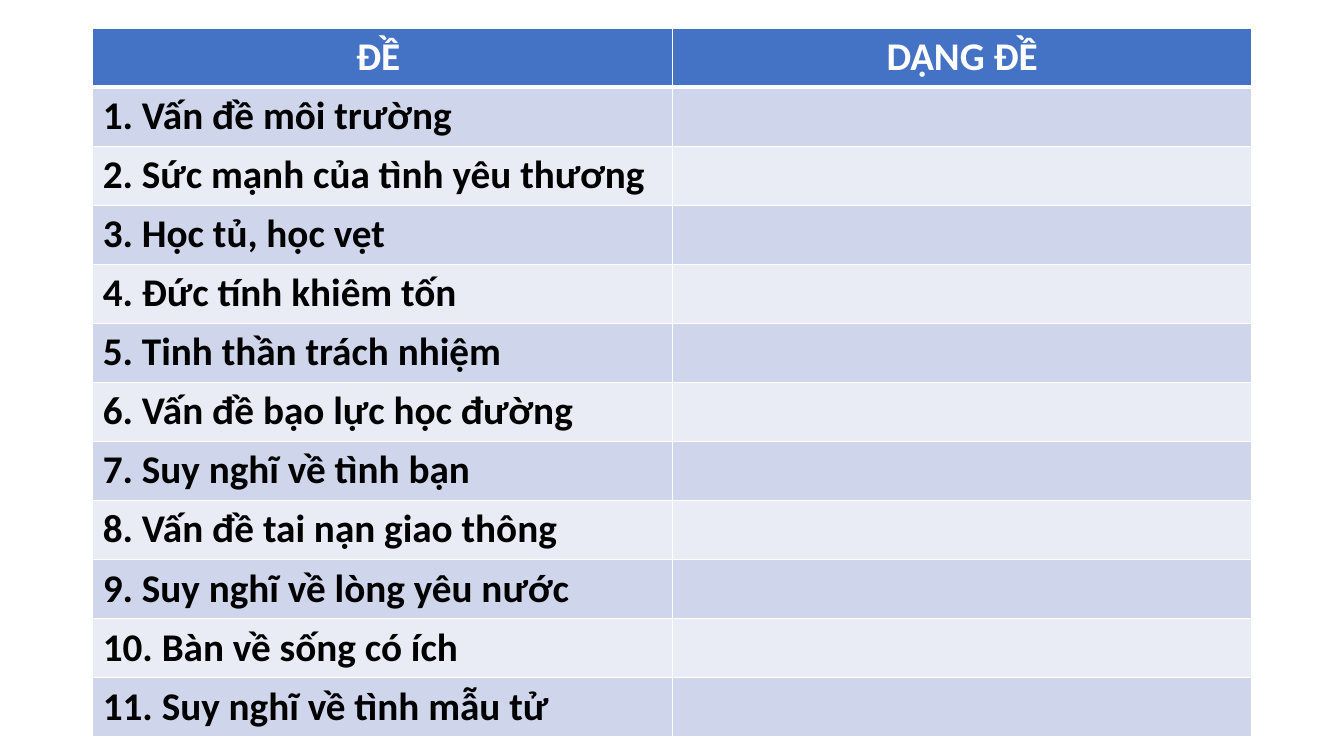
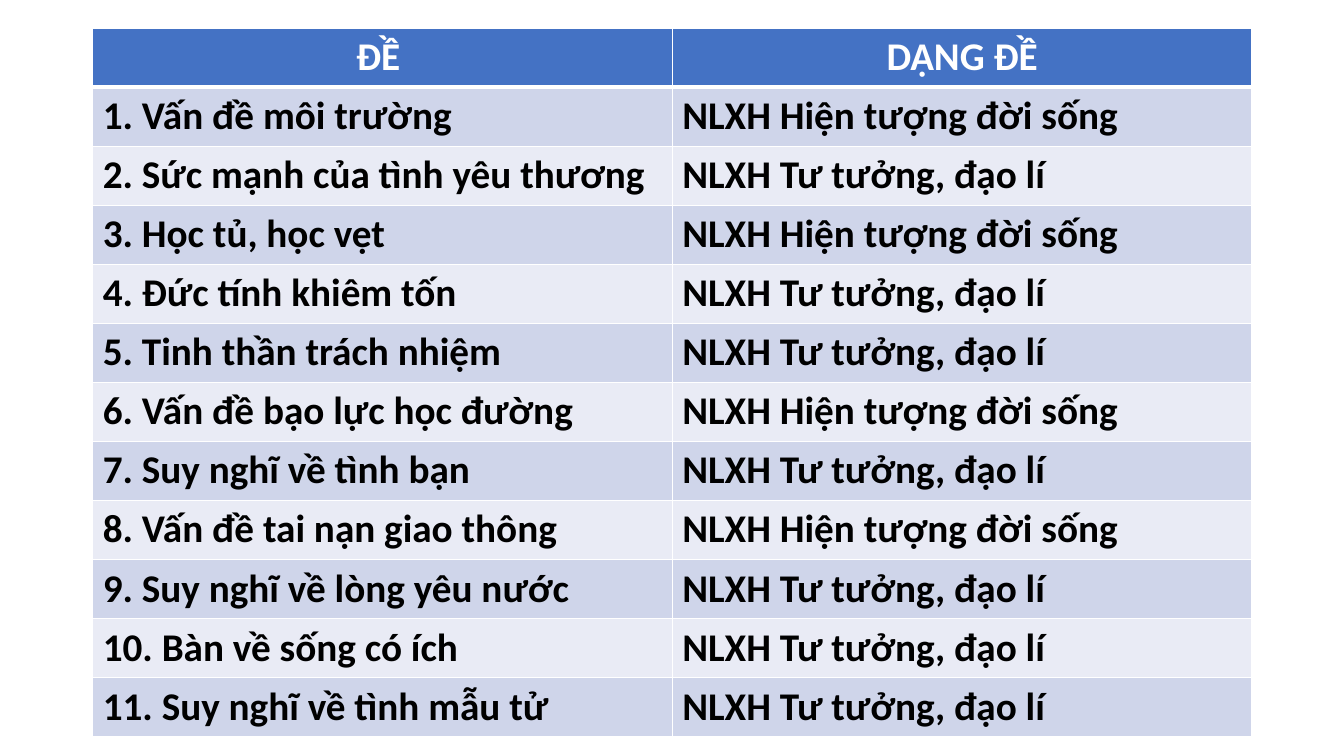
from lxml import etree
from pptx import Presentation
from pptx.dml.color import RGBColor
from pptx.enum import text
from pptx.oxml.ns import qn
from pptx.util import Pt

# Shared look
FONT, SIZE = "Calibri", 28
WHITE, BLACK, HEADER = "FFFFFF", "000000", "4472C4"
BANDS = ("CFD5EA", "E9EBF5")
TABLE_BOX = (66.24, 20.16, 828, 506.16)  # left, top, width, height

# Content
HEADINGS = ("ĐỀ ", "DẠNG ĐỀ")
LIFE = "NLXH Hiện tượng đời sống"
IDEAS = "NLXH Tư tưởng, đạo lí"
TOPICS = (
    ("Vấn đề môi trường", LIFE),
    ("Sức mạnh của tình yêu thương", IDEAS),
    ("Học tủ, học vẹt", LIFE),
    ("Đức tính khiêm tốn", IDEAS),
    ("Tinh thần trách nhiệm", IDEAS),
    ("Vấn đề bạo lực học đường", LIFE),
    ("Suy nghĩ về tình bạn", IDEAS),
    ("Vấn đề tai nạn giao thông", LIFE),
    ("Suy nghĩ về lòng yêu nước", IDEAS),
    ("Bàn về sống có ích", IDEAS),
    ("Suy nghĩ về tình mẫu tử", IDEAS),
)


def rgb(value):
    return RGBColor.from_string(value)


def set_borders(cell, top, bottom):
    """White cell borders; widths in points, sides are 1 pt."""
    tc_pr = cell._tc.get_or_add_tcPr()
    for side, width in (("L", 1), ("R", 1), ("T", top), ("B", bottom)):
        ln = etree.SubElement(tc_pr, qn(f"a:ln{side}"), w=str(Pt(width)))
        fill = etree.SubElement(ln, qn("a:solidFill"))
        etree.SubElement(fill, qn("a:srgbClr"), val=WHITE)


def format_cell(cell, words, row):
    is_header = row == 0
    set_borders(cell, top=3 if row == 1 else 1, bottom=3 if is_header else 1)
    cell.fill.solid()
    cell.fill.fore_color.rgb = rgb(HEADER if is_header else BANDS[(row - 1) % 2])
    if not words:
        return
    p = cell.text_frame.paragraphs[0]
    p.alignment = text.PP_ALIGN.CENTER if is_header else text.PP_ALIGN.LEFT
    r = p.add_run()
    r.text = words
    r.font.name, r.font.size, r.font.bold = FONT, Pt(SIZE), True
    r.font.color.rgb = rgb(WHITE if is_header else BLACK)


def add_topic_table(s, box, show_answers):
    rows = [HEADINGS]
    for number, (topic, kind) in enumerate(TOPICS, 1):
        rows.append((f"{number}. {topic}", kind if show_answers else ""))
    frame = s.shapes.add_table(len(rows), len(HEADINGS), *map(Pt, box))
    table = frame.table
    for column in table.columns:
        column.width = Pt(box[2] / len(HEADINGS))
    for i, row in enumerate(rows):
        table.rows[i].height = Pt(box[3] / len(rows))
        for j, words in enumerate(row):
            format_cell(table.cell(i, j), words, i)


def main():
    prs = Presentation()
    prs.slide_width, prs.slide_height = Pt(960), Pt(540)
    # Question slide, then the same table with answers
    for show_answers in (False, True):
        s = prs.slides.add_slide(prs.slide_layouts[6])
        add_topic_table(s, TABLE_BOX, show_answers)
    prs.save("out.pptx")


if __name__ == "__main__":
    main()
